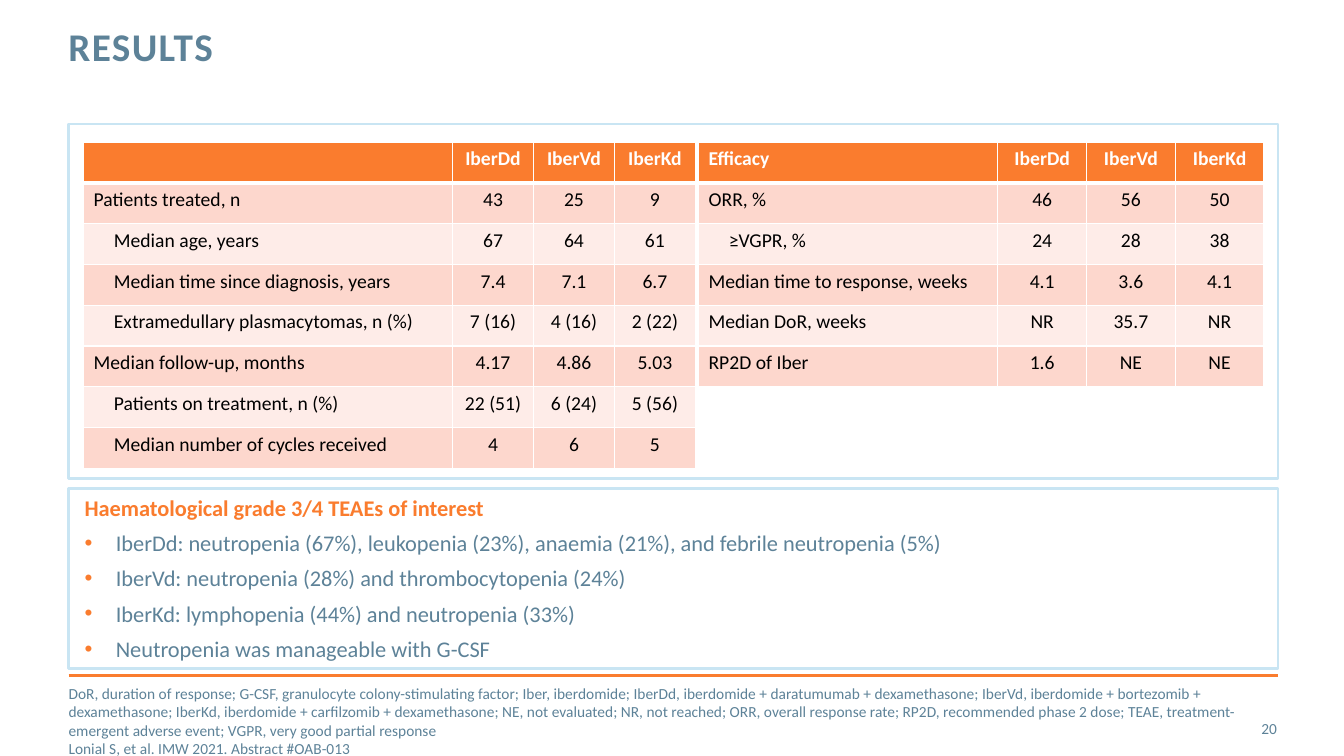
from lxml.etree import SubElement
from pptx import Presentation
from pptx.dml.color import RGBColor
from pptx.enum.shapes import MSO_CONNECTOR as Connector, MSO_SHAPE as Preset
from pptx.enum.text import MSO_ANCHOR as Anchor, PP_ALIGN as Align
from pptx.oxml.ns import qn
from pptx.util import Inches, Pt

ORANGE, SLATE, PALE_BLUE = "FA7C2E", "5D8298", "C9E5F3"
WHITE, BLACK = "FFFFFF", "000000"
BANDS = "FDD7CD", "FEECE8"
LEFT, WIDTH = 8.16, 144
UNIT = Inches(1) / 12
hex_colour = RGBColor.from_string


def grid(*cells):
    """Turn columns or rows of the 160 by 90 slide grid into lengths."""
    return [round(cell * UNIT) for cell in cells]


def style(para, size, colour, bold=False):
    for span in para.runs:
        span.font.name = "Calibri"
        span.font.size = Pt(size)
        span.font.bold = bold
        span.font.color.rgb = hex_colour(colour)


deck = Presentation()
deck.slide_width, deck.slide_height = grid(160, 90)
page = deck.slides.add_slide(deck.slide_layouts[6])

# Rule above the footnotes
left, right, rule_y = grid(LEFT, LEFT + WIDTH, 80.4)
rule = page.shapes.add_connector(Connector.STRAIGHT, left, rule_y, right, rule_y)
rule.line.color.rgb = hex_colour(ORANGE)
rule.line.width = Pt(2)
SubElement(rule._element.spPr, qn("a:effectLst"))

# Title, slide number and footnotes
footnotes = (
    "DoR, duration of response; G-CSF, granulocyte colony-stimulating factor; "
    "Iber, iberdomide; IberDd, iberdomide + daratumumab + dexamethasone; "
    "IberVd, iberdomide + bortezomib + dexamethasone; "
    "IberKd, iberdomide + carfilzomib + dexamethasone; NE, not evaluated; "
    "NR, not reached; ORR, overall response rate; RP2D, recommended phase 2 dose; "
    "TEAE, treatment-emergent adverse event; VGPR, very good partial response\n"
    "Lonial S, et al. IMW 2021. Abstract #OAB-013"
)
labels = [
    ("RESULTS", (LEFT, 3.24, 114.72, 10.56), 28, True, Anchor.TOP, Align.LEFT),
    ("20", (141.72, 84.36, 10.32, 4.8), 11, False, Anchor.MIDDLE, Align.RIGHT),
    (footnotes, (LEFT, 83.4, 139.44, 4.8), 11, False, Anchor.MIDDLE, Align.LEFT),
]
for text, place, size, bold, anchor, align in labels:
    frame = page.shapes.add_textbox(*grid(*place)).text_frame
    frame.margin_left = frame.margin_right = frame.margin_top = frame.margin_bottom = 0
    frame.word_wrap = True
    frame.vertical_anchor = anchor
    para = frame.paragraphs[0]
    para.text = text
    para.alignment = align
    style(para, size, SLATE, bold)
    if text == "RESULTS":
        para.line_spacing = Pt(30)
        para.runs[0].font._element.set("spc", "100")

# Outlined panels: adverse events below, tables above
panels = []
for top, height in [(58.2, 21.36), (14.76, 42.24)]:
    panel = page.shapes.add_shape(Preset.RECTANGLE, *grid(LEFT, top, WIDTH, height))
    panel.shadow.inherit = False
    panel.fill.background()
    panel.line.color.rgb = hex_colour(PALE_BLUE)
    panel.line.width = Pt(2)
    panels.append(panel)

events = [
    "Haematological grade 3/4 TEAEs of interest",
    "IberDd: neutropenia (67%), leukopenia (23%), anaemia (21%), and febrile neutropenia (5%)",
    "IberVd: neutropenia (28%) and thrombocytopenia (24%)",
    "IberKd: lymphopenia (44%) and neutropenia (33%)",
    "Neutropenia was manageable with G-CSF",
]
frame = panels[0].text_frame
frame.word_wrap = True
frame.vertical_anchor = Anchor.TOP
frame.margin_left = Inches(0.16)
frame.text = "\n".join(events)
for index, para in enumerate(frame.paragraphs):
    para.alignment = Align.LEFT
    style(para, 16, SLATE if index else ORANGE, bold=index == 0)
    if index:
        para.space_before = Pt(6)
        props = para._p.get_or_add_pPr()
        props.set("marL", str(Inches(0.31)))
        props.set("indent", str(-Inches(0.31)))
        SubElement(SubElement(props, qn("a:buClr")), qn("a:srgbClr"), val=ORANGE)
        SubElement(props, qn("a:buFont"), typeface="Arial")
        SubElement(props, qn("a:buChar"), char="•")

# Tables: place, column widths, indented rows, contents
regimens = ["IberDd", "IberVd", "IberKd"]
tables = [
    (9.96, 43.92, 9.64, {2, 3, 4, 6, 7}, [
        ["", *regimens],
        ["Patients treated, n", "43", "25", "9"],
        ["Median age, years", "67", "64", "61"],
        ["Median time since diagnosis, years", "7.4", "7.1", "6.7"],
        ["Extramedullary plasmacytomas, n (%)", "7 (16)", "4 (16)", "2 (22)"],
        ["Median follow-up, months", "4.17", "4.86", "5.03"],
        ["Patients on treatment, n (%)", "22 (51)", "6 (24)", "5 (56)"],
        ["Median number of cycles received", "4", "6", "5"],
    ]),
    (83.16, 35.64, 10.56, {2}, [
        ["Efficacy", *regimens],
        ["ORR, %", "46", "56", "50"],
        ["≥VGPR, %", "24", "28", "38"],
        ["Median time to response, weeks", "4.1", "3.6", "4.1"],
        ["Median DoR, weeks", "NR", "35.7", "NR"],
        ["RP2D of Iber", "1.6", "NE", "NE"],
    ]),
]
row_height = 4.86
for table_left, label_width, value_width, indented, rows in tables:
    widths = [label_width] + [value_width] * len(regimens)
    place = grid(table_left, 16.92, sum(widths), row_height * len(rows))
    table = page.shapes.add_table(len(rows), len(widths), *place).table
    table.horz_banding = False
    for column, width in zip(table.columns, grid(*widths)):
        column.width = width
    for r, values in enumerate(rows):
        table.rows[r].height = grid(row_height)[0]
        for c, value in enumerate(values):
            cell = table.cell(r, c)
            cell.margin_bottom = Inches(0.04)
            para = cell.text_frame.paragraphs[0]
            para.text = value
            para.alignment = Align.CENTER if c else Align.LEFT
            if c == 0 and r in indented:
                para._p.get_or_add_pPr().set("marL", str(Inches(0.2)))
            style(para, 14, BLACK if r else WHITE, bold=r == 0)
            cell_props = cell._tc.get_or_add_tcPr()
            for side in "LRTB":
                under_header = (r, side) in [(0, "B"), (1, "T")]
                border = SubElement(cell_props, qn("a:ln" + side),
                                    w=str(Pt(3 if under_header else 1)))
                SubElement(SubElement(border, qn("a:solidFill")), qn("a:srgbClr"), val=WHITE)
            cell.fill.solid()
            cell.fill.fore_color.rgb = hex_colour(BANDS[(r - 1) % 2] if r else ORANGE)

deck.save("out.pptx")
